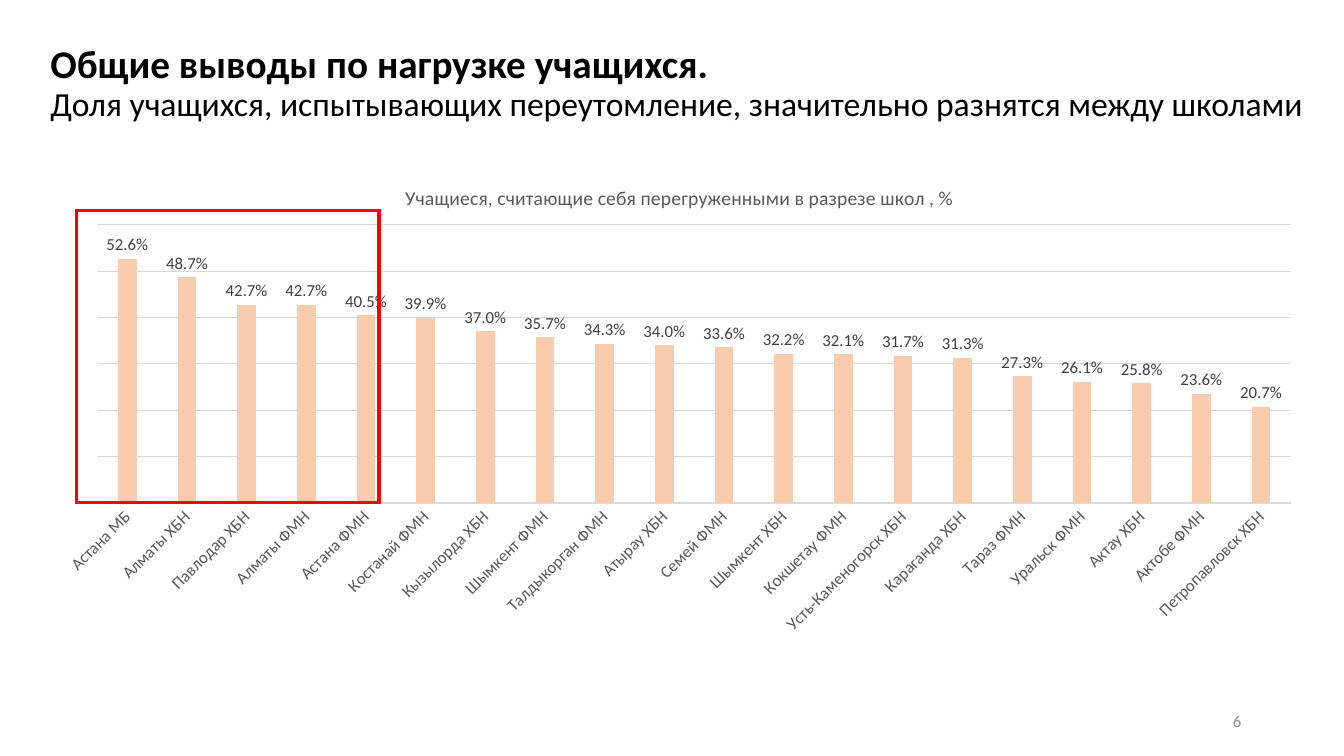
from pptx import Presentation
from pptx.chart.data import CategoryChartData
from pptx.dml.color import RGBColor
from pptx.enum.chart import XL_CHART_TYPE, XL_LABEL_POSITION, XL_TICK_LABEL_POSITION, XL_TICK_MARK
from pptx.enum.shapes import MSO_SHAPE
from pptx.enum.text import MSO_ANCHOR, MSO_AUTO_SIZE, PP_ALIGN
from pptx.oxml import parse_xml
from pptx.oxml.ns import nsdecls
from pptx.util import Inches, Pt

COLUMNS = XL_CHART_TYPE.COLUMN_CLUSTERED
OUTSIDE_END = XL_LABEL_POSITION.OUTSIDE_END
NEXT_TO_AXIS = XL_TICK_LABEL_POSITION.NEXT_TO_AXIS
NO_TICKS = XL_TICK_MARK.NONE
RECTANGLE = MSO_SHAPE.RECTANGLE
MIDDLE = MSO_ANCHOR.MIDDLE
NO_AUTOFIT = MSO_AUTO_SIZE.NONE
LEFT = PP_ALIGN.LEFT
RIGHT = PP_ALIGN.RIGHT

FONT = "Calibri"
GRID_COLOR = "D9D9D9"
PERCENT = "0.0%"
PLOT_AREA = {"x": 0.044, "y": 0.124, "w": 0.935, "h": 0.58}  # shares of the chart

SCHOOLS = {
    "Астана МБ": 0.526,
    "Алматы ХБН": 0.487,
    "Павлодар ХБН": 0.427,
    "Алматы ФМН": 0.427,
    "Астана ФМН": 0.405,
    "Костанай ФМН": 0.399,
    "Кызылорда ХБН": 0.37,
    "Шымкент ФМН": 0.357,
    "Талдыкорган ФМН": 0.343,
    "Атырау ХБН": 0.34,
    "Семей ФМН": 0.336,
    "Шымкент ХБН": 0.322,
    "Кокшетау ФМН": 0.321,
    "Усть-Каменогорск ХБН": 0.317,
    "Караганда ХБН": 0.313,
    "Тараз ФМН": 0.273,
    "Уральск ФМН": 0.261,
    "Актау ХБН": 0.258,
    "Актобе ФМН": 0.236,
    "Петропавловск ХБН": 0.207,
}


def rgb(color):
    return RGBColor.from_string(color)


def set_font(font, size, color, bold=False):
    font.name = FONT
    font.size = Pt(size)
    font.bold = bold
    font.color.rgb = rgb(color)


presentation = Presentation()
presentation.slide_width = Inches(13.33)
presentation.slide_height = Inches(7.5)
slide = presentation.slides.add_slide(presentation.slide_layouts[5])

# Title with a lighter second line
title = slide.shapes.title
title.left, title.top = Inches(0.4), Inches(0.3)
title.width, title.height = Inches(12.63), Inches(1.07)
title_frame = title.text_frame
title_frame.text = (
    "Общие выводы по нагрузке учащихся. \v"
    "Доля учащихся, испытывающих переутомление, значительно разнятся между школами"
)
title_frame.word_wrap = True
title_frame.auto_size = NO_AUTOFIT
title_frame.vertical_anchor = MIDDLE
title_paragraph = title_frame.paragraphs[0]
title_paragraph.alignment = LEFT
title_paragraph.line_spacing = 0.9
heading, subheading = title_paragraph.runs
set_font(heading.font, 28, "000000", bold=True)
set_font(subheading.font, 24, "000000")

# Chart of overloaded pupils by school
chart_data = CategoryChartData(number_format=PERCENT)
chart_data.categories = list(SCHOOLS)
chart_data.add_series("Series 1", list(SCHOOLS.values()))
chart = slide.shapes.add_chart(
    COLUMNS, Inches(0.41), Inches(1.64), Inches(12.66), Inches(4.76), chart_data
).chart
set_font(chart.font, 12, "000000")
chart.has_legend = False
chart.has_title = True
chart_title = chart.chart_title
chart_title.include_in_layout = False
chart_title.text_frame.text = "Учащиеся, считающие себя перегруженными в разрезе школ , %"
set_font(chart_title.text_frame.paragraphs[0].runs[0].font, 14, "595959")

plot = chart.plots[0]
plot.vary_by_categories = False
plot.gap_width = 219
plot.overlap = -27
bars = plot.series[0]
bars.format.fill.solid()
bars.format.fill.fore_color.rgb = rgb("F8CBAD")
plot.has_data_labels = True
labels = plot.data_labels
labels.show_value = True
labels.position = OUTSIDE_END
labels.number_format = PERCENT
labels.number_format_is_linked = False
set_font(labels.font, 12, "404040")

school_axis = chart.category_axis
school_axis.major_tick_mark = NO_TICKS
school_axis.minor_tick_mark = NO_TICKS
school_axis.tick_label_position = NEXT_TO_AXIS
set_font(school_axis.tick_labels.font, 12, "595959")

share_axis = chart.value_axis
share_axis.visible = False
share_axis.major_tick_mark = NO_TICKS
share_axis.minimum_scale = 0
share_axis.maximum_scale = 0.6
share_axis.major_unit = 0.1
share_axis.has_major_gridlines = True
for line in (school_axis.format.line, share_axis.major_gridlines.format.line):
    line.color.rgb = rgb(GRID_COLOR)
    line.width = Pt(0.75)

# Slanted school names and a fixed plot area
school_text = chart.element.xpath(".//c:catAx/c:txPr/a:bodyPr")[0]
school_text.set("rot", str(-45 * 60000))
school_text.set("vert", "horz")
plot_area = chart.element.xpath(".//c:plotArea")[0]
for layout in plot_area.xpath("./c:layout"):
    plot_area.remove(layout)
shares = "".join(f'<c:{name} val="{share}"/>' for name, share in PLOT_AREA.items())
plot_area.insert(0, parse_xml(
    f'<c:layout {nsdecls("c")}><c:manualLayout><c:layoutTarget val="inner"/>'
    f'<c:xMode val="edge"/><c:yMode val="edge"/>{shares}</c:manualLayout></c:layout>'
))

# Page number
page_number = slide.shapes.add_textbox(Inches(9.41), Inches(6.95), Inches(3), Inches(0.4))
page_frame = page_number.text_frame
page_frame.word_wrap = True
page_frame.vertical_anchor = MIDDLE
page_frame.text = "6"
page_frame.paragraphs[0].alignment = RIGHT
set_font(page_frame.paragraphs[0].runs[0].font, 12, "8C8C8C")

# Frame around the most overloaded schools, with square corners
highlight = slide.shapes.add_shape(RECTANGLE, Inches(0.76), Inches(2.09), Inches(3), Inches(2.9))
highlight.shadow.inherit = False
highlight.fill.background()
highlight.line.color.rgb = rgb("FF0000")
highlight.line.width = Pt(2.25)
outline = highlight.element.xpath("./p:spPr/a:ln")[0]
outline.append(parse_xml(f'<a:miter {nsdecls("a")} lim="800000"/>'))

presentation.save("out.pptx")
